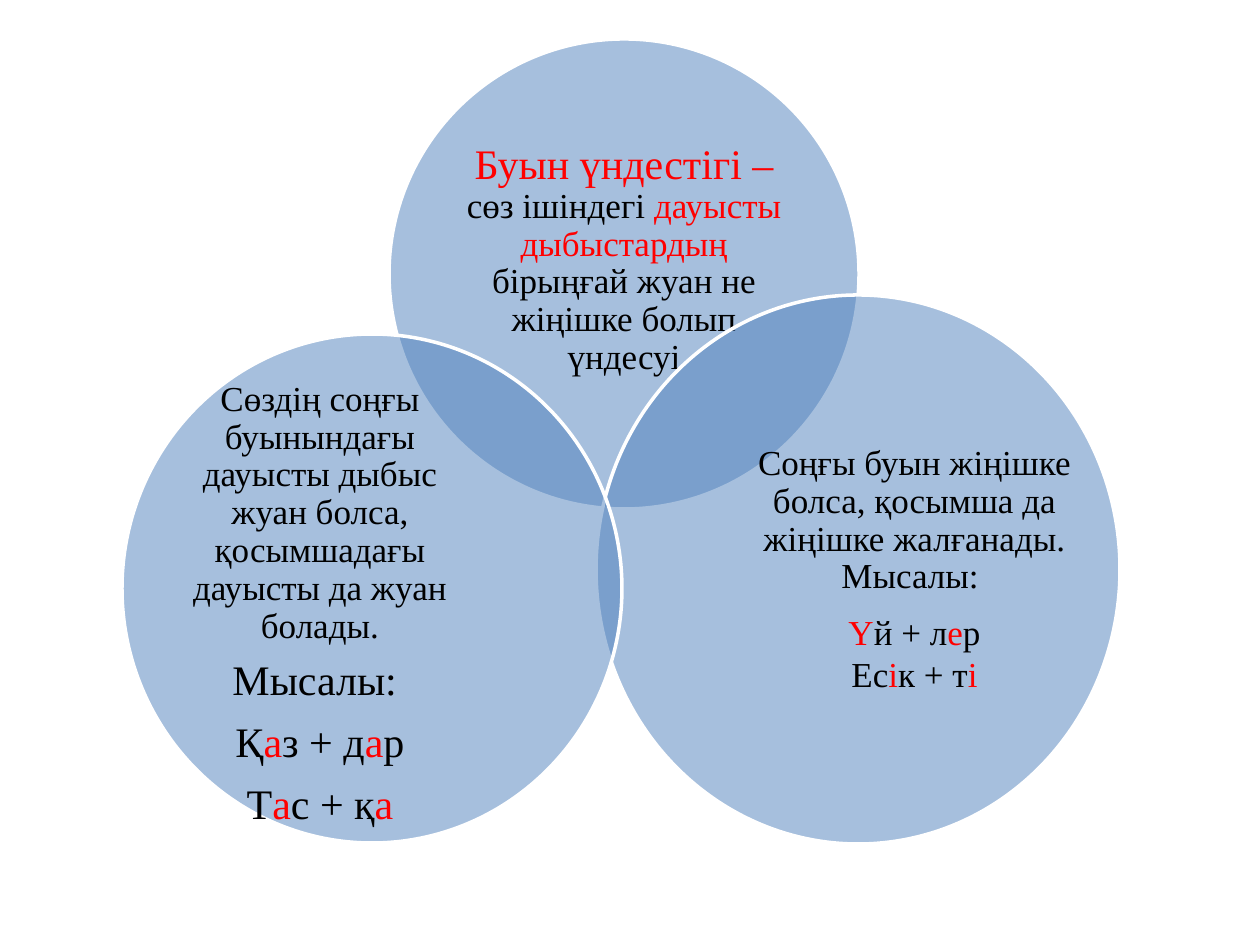
from lxml.etree import SubElement
from pptx import Presentation
from pptx.dml.color import RGBColor
from pptx.enum.shapes import MSO_SHAPE as Shape
from pptx.enum.text import MSO_ANCHOR as Anchor, PP_ALIGN as Align
from pptx.oxml.ns import qn
from pptx.util import Emu, Pt

SCALE = 914400 / 126
FONT = "Times New Roman"
COLORS = {"circle": "4F81BD", "outline": "FFFFFF", "text": "000000", "accent": "FF0000"}
BODY, LARGE = 20, 24

# Paragraph formats
SPACED = {"line_spacing": 0.9, "space_after": Pt(8)}
LARGE_SPACED = {"line_spacing": 0.9, "space_after": Pt(9.5)}
PLAIN = {"space_after": Pt(0)}


def px(value):
    return Emu(round(value * SCALE))


def color(name):
    return RGBColor.from_string(COLORS[name])


def example(parts, size, layout):
    """A word plus suffix, with vowels marked: the accent runs are in red."""
    return layout, [(text, size, name) for text, name in parts]


def add_circle(slide, box):
    circle = slide.shapes.add_shape(Shape.OVAL, *map(px, box))
    circle.shadow.inherit = False
    circle.fill.solid()
    circle.fill.fore_color.rgb = color("circle")
    fill = circle.fill._xPr.find(qn("a:solidFill"))
    SubElement(fill[0], qn("a:alpha"), val="50000")
    circle.line.color.rgb = color("outline")
    circle.line.width = Pt(2)


def add_text(slide, box, paragraphs, margins):
    frame = slide.shapes.add_textbox(*map(px, box)).text_frame
    settings = {"word_wrap": True, "vertical_anchor": Anchor.MIDDLE,
                "margin_left": 0, "margin_right": 0,
                "margin_top": px(margins[0]), "margin_bottom": px(margins[1])}
    for name, value in settings.items():
        setattr(frame, name, value)
    for index, (layout, runs) in enumerate(paragraphs):
        paragraph = frame.add_paragraph() if index else frame.paragraphs[0]
        for name, value in {"alignment": Align.CENTER, **layout}.items():
            setattr(paragraph, name, value)
        for text, size, color_name in runs:
            run = paragraph.add_run()
            run.text = text
            for name, value in {"name": FONT, "size": Pt(size)}.items():
                setattr(run.font, name, value)
            run.font.color.rgb = color(color_name)


def add_venn_part(slide, box, text_offset, text_size, paragraphs, margins=(0, 0)):
    """A circle of the diagram and its text, offset from the circle's corner."""
    left, top = box[:2]
    add_circle(slide, box)
    text_box = (left + text_offset[0], top + text_offset[1], *text_size)
    add_text(slide, text_box, paragraphs, margins)


DEFINITION = [
    (SPACED, [("Буын үндестігі – ", LARGE, "accent"),
              ("сөз ішіндегі ", BODY, "text"),
              ("дауысты дыбыстардың ", BODY, "accent"),
              ("бірыңғай жуан не жіңішке болып үндесуі", BODY, "text")]),
]
SOFT_RULE = [
    (SPACED, [("Соңғы буын жіңішке болса, қосымша да жіңішке жалғанады. Мысалы: ",
               BODY, "text")]),
    example([("Ү", "accent"), ("й + л", "text"), ("е", "accent"), ("р", "text")],
            BODY, PLAIN),
    example([("Ес", "text"), ("і", "accent"), ("к + т", "text"), ("і", "accent")],
            BODY, PLAIN),
]
HARD_RULE = [
    (SPACED, [("Сөздің соңғы буынындағы дауысты дыбыс жуан болса, "
               "қосымшадағы дауысты да жуан болады.", BODY, "text")]),
    (LARGE_SPACED, [("Мысалы: ", LARGE, "text")]),
    example([("Қ", "text"), ("а", "accent"), ("з + д", "text"), ("а", "accent"),
             ("р", "text")], LARGE, LARGE_SPACED),
    example([("Т", "text"), ("а", "accent"), ("с + қ", "text"), ("а", "accent")],
            LARGE, LARGE_SPACED),
]


def main():
    presentation = Presentation()
    presentation.slide_width, presentation.slide_height = px(1260), px(945)
    slide = presentation.slides.add_slide(presentation.slide_layouts[6])

    # Top circle: definition
    add_venn_part(slide, (389, 39, 470, 470), (63, 82), (344, 212),
                  DEFINITION, margins=(66, 0))
    # Right circle: soft vowels
    add_venn_part(slide, (596, 295, 524, 549), (161, 142), (315, 302),
                  SOFT_RULE, margins=(0, 36))
    # Left circle: hard vowels
    add_venn_part(slide, (122, 334, 500, 509), (48, 131), (300, 280), HARD_RULE)

    presentation.save("out.pptx")


if __name__ == "__main__":
    main()
